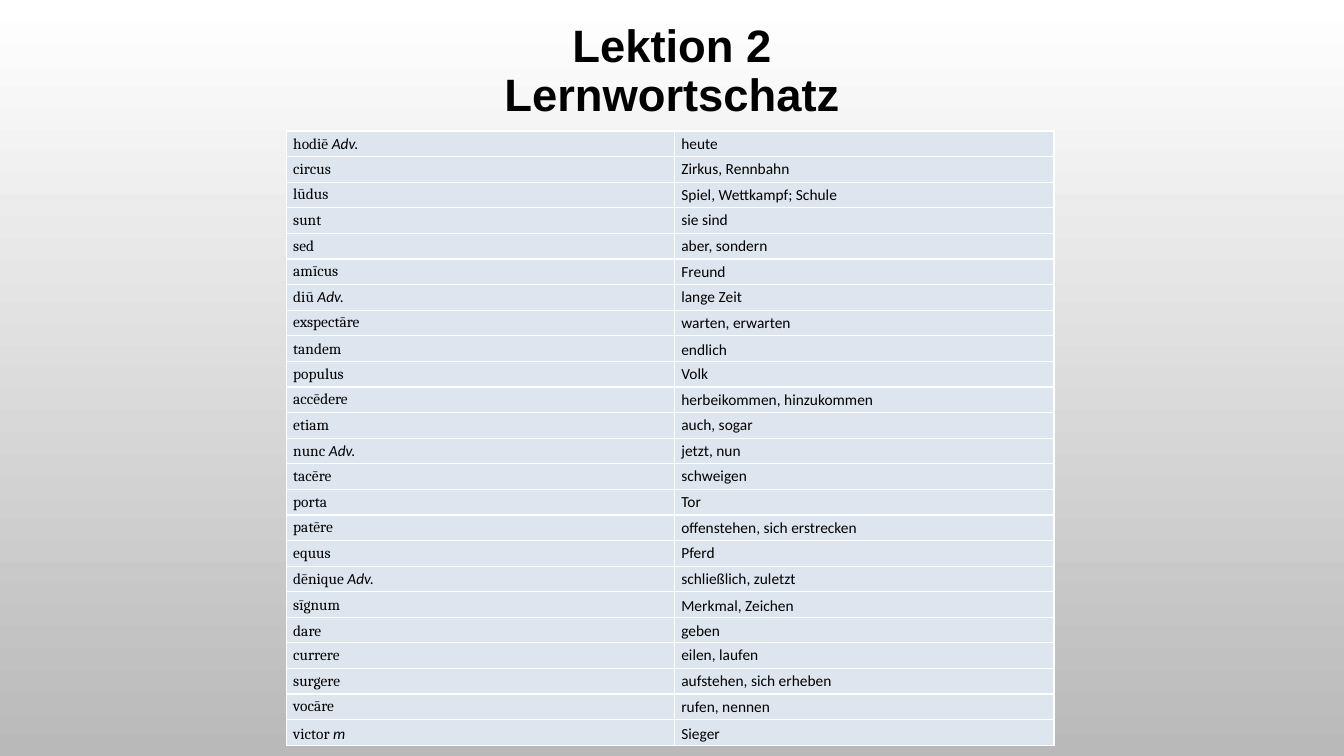
import pptx
import pptx.util
import pptx.dml.color
import pptx.enum.text

Cm = pptx.util.Cm
Pt = pptx.util.Pt
RGBColor = pptx.dml.color.RGBColor
PP_ALIGN = pptx.enum.text.PP_ALIGN
MSO_ANCHOR = pptx.enum.text.MSO_ANCHOR

TITLE = ("Lektion 2", "Lernwortschatz")
VOCABULARY = [
    ("hodiē", "Adv.", "heute"),
    ("circus", "", "Zirkus, Rennbahn"),
    ("lūdus", "", "Spiel, Wettkampf; Schule"),
    ("sunt", "", "sie sind"),
    ("sed", "", "aber, sondern"),
    ("amīcus", "", "Freund"),
    ("diū", "Adv.", "lange Zeit"),
    ("exspectāre", "", "warten, erwarten"),
    ("tandem", "", "endlich"),
    ("populus", "", "Volk"),
    ("accēdere", "", "herbeikommen, hinzukommen"),
    ("etiam", "", "auch, sogar"),
    ("nunc", "Adv.", "jetzt, nun"),
    ("tacēre", "", "schweigen"),
    ("porta", "", "Tor"),
    ("patēre", "", "offenstehen, sich erstrecken"),
    ("equus", "", "Pferd"),
    ("dēnique", "Adv.", "schließlich, zuletzt"),
    ("sīgnum", "", "Merkmal, Zeichen"),
    ("dare", "", "geben"),
    ("currere", "", "eilen, laufen"),
    ("surgere", "", "aufstehen, sich erheben"),
    ("vocāre", "", "rufen, nennen"),
    ("victor", "m", "Sieger"),
]
LOOSE_WORDS = {"tandem", "sīgnum", "dare", "victor"}

BLACK = RGBColor(0x00, 0x00, 0x00)
WHITE = RGBColor(0xFF, 0xFF, 0xFF)
GREY = RGBColor(0xB9, 0xB9, 0xB9)
PALE_BLUE = RGBColor(0xDD, 0xE5, 0xEF)

SLIDE_W, SLIDE_H = Cm(33.87), Cm(19.05)
TABLE_X, TABLE_Y, TABLE_H = Cm(7.21), Cm(3.3), Cm(15.48)
COLUMN_WIDTHS = (Cm(9.78), Cm(9.57))
TITLE_W, TITLE_Y, TITLE_H = Cm(28.78), Cm(0.5), Cm(2.6)


def add_text(p, text, size=11, font="Calibri", bold=False, italic=False):
    r = p.add_run()
    r.text = text
    r.font.size = Pt(size)
    r.font.name = font
    r.font.bold = bold
    r.font.italic = italic
    r.font.color.rgb = BLACK


def fill_cell(cell, runs, spacing):
    cell.fill.solid()
    cell.fill.fore_color.rgb = PALE_BLUE
    cell.vertical_anchor = MSO_ANCHOR.MIDDLE
    cell.margin_left = cell.margin_right = Cm(0.18)
    cell.margin_top = cell.margin_bottom = 0
    p = cell.text_frame.paragraphs[0]
    p.line_spacing = spacing
    for text, style in runs:
        add_text(p, text, **style)


def add_title(s):
    sp = s.shapes.add_textbox((SLIDE_W - TITLE_W) // 2, TITLE_Y, TITLE_W, TITLE_H)
    tf = sp.text_frame
    tf.word_wrap = True
    tf.vertical_anchor = MSO_ANCHOR.MIDDLE
    tf.margin_top = tf.margin_bottom = 0
    p = tf.paragraphs[0]
    p.alignment = PP_ALIGN.CENTER
    p.line_spacing = Pt(35)
    for i, line in enumerate(TITLE):
        if i:
            p.add_line_break()
        add_text(p, line, size=32.4, font="Arial", bold=True)


def add_vocabulary(s):
    table = s.shapes.add_table(len(VOCABULARY), len(COLUMN_WIDTHS), TABLE_X, TABLE_Y,
                               sum(COLUMN_WIDTHS), TABLE_H).table
    table.horz_banding = False
    for column, width in zip(table.columns, COLUMN_WIDTHS):
        column.width = width
    for i, (latin, note, german) in enumerate(VOCABULARY):
        table.rows[i].height = TABLE_H // len(VOCABULARY)
        spacing = 1.15 if latin in LOOSE_WORDS else 1.0
        runs = [(latin + " " if note else latin, {"font": "Cambria"})]
        if note:
            runs.append((note, {"italic": True}))
        fill_cell(table.cell(i, 0), runs, spacing)
        fill_cell(table.cell(i, 1), [(german, {})], spacing)


def main():
    prs = pptx.Presentation()
    prs.slide_width, prs.slide_height = SLIDE_W, SLIDE_H
    s = prs.slides.add_slide(prs.slide_layouts[6])
    fill = s.background.fill
    fill.gradient()
    fill.gradient_angle = 270
    for stop, color in zip(fill.gradient_stops, (WHITE, GREY)):
        stop.color.rgb = color
    add_title(s)
    add_vocabulary(s)
    prs.save("out.pptx")


if __name__ == "__main__":
    main()
